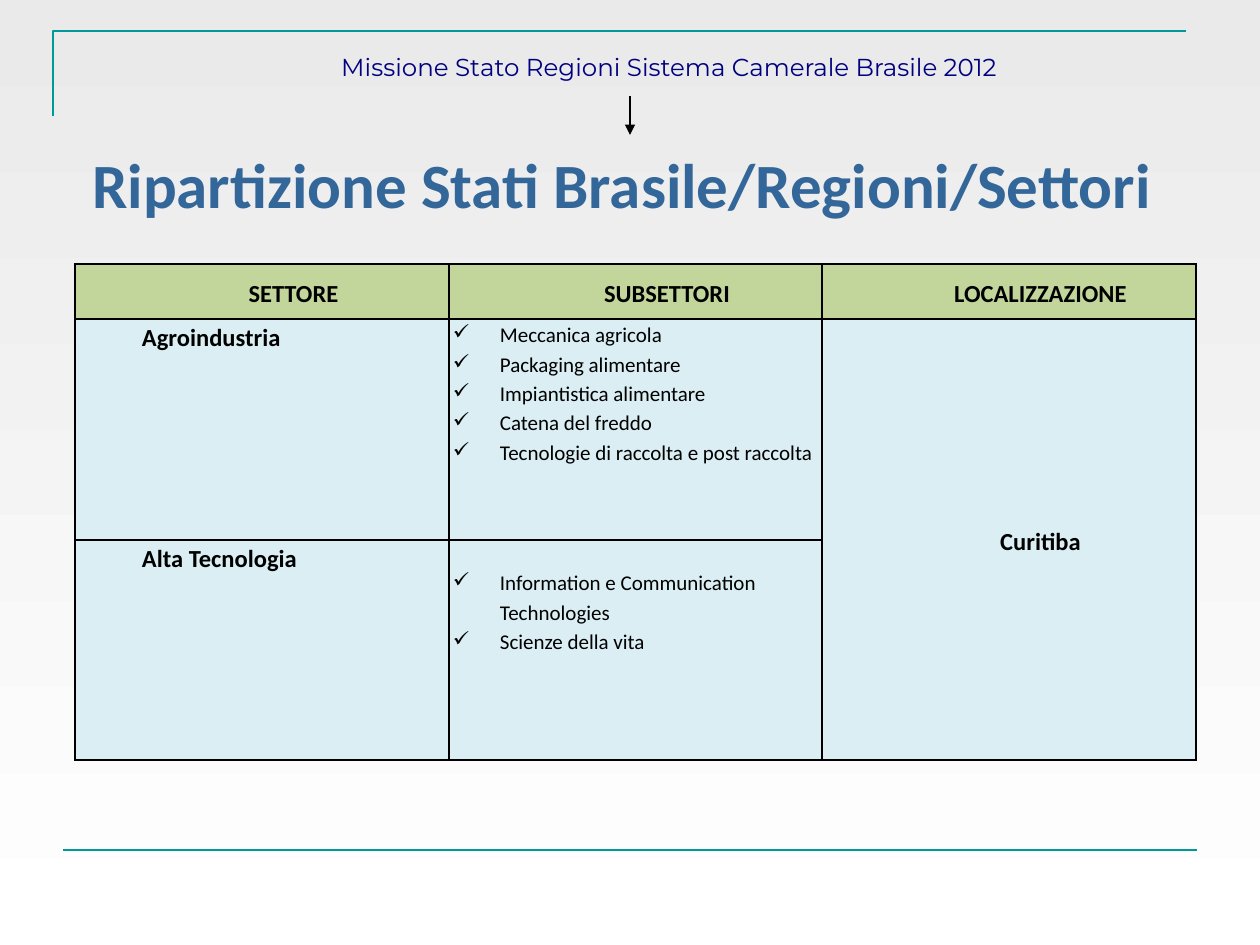
import dataclasses

import pptx
import pptx.dml.color
import pptx.enum.shapes
import pptx.enum.text
import pptx.oxml
import pptx.oxml.ns
import pptx.util

SCALE = 914400 / 126
COLORS = {
    "teal": "009999", "navy": "000080", "title": "336699", "black": "000000",
    "header": "C2D69B", "body": "DAEEF3", "top": "EAEAEA", "bottom": "FFFFFF",
}
ALIGN = pptx.enum.text.PP_ALIGN
ANCHOR = pptx.enum.text.MSO_ANCHOR
NAMESPACE = pptx.oxml.ns.nsdecls("a")


@dataclasses.dataclass
class Line:
    start: tuple[int, int]
    end: tuple[int, int]
    color: str
    width: float
    arrow: bool = False


@dataclasses.dataclass
class Cell:
    row: int
    column: int
    lines: list[str]
    fill: str = "body"
    centered: bool = False
    bullets: bool = False
    top: int = 0


LINES = [
    Line((63, 850), (1197, 850), "teal", 1.5),
    Line((630, 96), (630, 135), "black", 0.75, arrow=True),
]
HEADERS = ["SETTORE", "SUBSETTORI", "LOCALIZZAZIONE"]
CELLS = [
    *(Cell(0, column, [text], "header", centered=True) for column, text in enumerate(HEADERS)),
    Cell(1, 0, ["Agroindustria"]),
    Cell(1, 1, ["Meccanica agricola", "Packaging alimentare", "Impiantistica alimentare",
                "Catena del freddo", "Tecnologie di raccolta e post raccolta"], bullets=True),
    Cell(1, 2, ["Curitiba"], centered=True),
    Cell(2, 0, ["Alta Tecnologia"]),
    Cell(2, 1, ["Information e Communication Technologies", "Scienze della vita"],
         bullets=True, top=27),
]


def px(value: int) -> int:
    """Turn pixels into EMU."""
    return round(value * SCALE)


def rgb(name: str) -> pptx.dml.color.RGBColor:
    """Look up a named colour."""
    return pptx.dml.color.RGBColor.from_string(COLORS[name])


def write_text(frame, lines: list[str], *, size: int, color: str = "black", font: str = "Calibri",
               bold: bool = False, align=ALIGN.LEFT, spacing: float = 1.0,
               margin: int = 0, indent: int = 0, bullet: str = "") -> None:
    """Fill a text frame with one formatted paragraph per line."""
    for index, text in enumerate(lines):
        paragraph = frame.add_paragraph() if index else frame.paragraphs[0]
        paragraph.alignment = align
        paragraph.line_spacing = spacing
        properties = paragraph._p.get_or_add_pPr()
        properties.set("marL", str(px(margin)))
        properties.set("indent", str(px(indent)))
        if bullet:
            properties.append(pptx.oxml.parse_xml(f'<a:buChar {NAMESPACE} char="{bullet}"/>'))
        run = paragraph.add_run()
        run.text = text
        run.font.size = pptx.util.Pt(size)
        run.font.name = font
        run.font.bold = bold
        run.font.color.rgb = rgb(color)


def add_label(slide, box: tuple[int, int, int, int], text: str, **style) -> None:
    """Add a centred one-line text box."""
    shape = slide.shapes.add_textbox(*map(px, box))
    shape.text_frame.word_wrap = True
    write_text(shape.text_frame, [text], align=ALIGN.CENTER, **style)


def add_line(slide, line: Line) -> None:
    """Draw a straight line with an optional arrowhead."""
    connector = slide.shapes.add_connector(
        pptx.enum.shapes.MSO_CONNECTOR.STRAIGHT, *map(px, line.start + line.end))
    connector.line.color.rgb = rgb(line.color)
    connector.line.width = pptx.util.Pt(line.width)
    if line.arrow:
        connector.line._get_or_add_ln().append(
            pptx.oxml.parse_xml(f'<a:tailEnd {NAMESPACE} type="triangle"/>'))
    connector._element.spPr.append(pptx.oxml.parse_xml(f"<a:effectLst {NAMESPACE}/>"))


def add_corner(slide) -> None:
    """Draw the open corner at the top left."""
    builder = slide.shapes.build_freeform(53, 116, scale=SCALE)
    builder.add_line_segments([(53, 31), (1186, 31)], close=False)
    shape = builder.convert_to_shape()
    shape.shadow.inherit = False
    shape.fill.background()
    shape.line.color.rgb = rgb("teal")
    shape.line.width = pptx.util.Pt(1.5)


def add_borders(cell) -> None:
    """Give a table cell a thin black border on every side."""
    properties = cell._tc.get_or_add_tcPr()
    for index, side in enumerate("LRTB"):
        properties.insert(index, pptx.oxml.parse_xml(
            f'<a:ln{side} {NAMESPACE} w="12700"><a:solidFill>'
            f'<a:srgbClr val="{COLORS["black"]}"/></a:solidFill></a:ln{side}>'))


def fill_cell(table, entry: Cell) -> None:
    """Write and format one table cell."""
    cell = table.cell(entry.row, entry.column)
    cell.margin_left = cell.margin_right = px(4)
    cell.margin_top, cell.margin_bottom = px(entry.top), 0
    cell.vertical_anchor = ANCHOR.MIDDLE if entry.centered else ANCHOR.TOP
    cell.fill.solid()
    cell.fill.fore_color.rgb = rgb(entry.fill)
    if entry.bullets:
        style = {"size": 12, "margin": 47, "indent": -47, "bullet": "✓"}
    else:
        style = {"size": 14, "margin": 63, "bold": True}
    write_text(cell.text_frame, entry.lines, spacing=1.15,
               align=ALIGN.CENTER if entry.centered else ALIGN.LEFT, **style)


def add_sector_table(slide) -> None:
    """Build the table of sectors, subsectors and location."""
    widths, heights = [374, 373, 374], [55, 221, 220]
    table = slide.shapes.add_table(
        3, 3, px(75), px(264), px(sum(widths)), px(sum(heights))).table
    table.first_row = table.horz_banding = False
    for column, width in zip(table.columns, widths):
        column.width = px(width)
    for row, height in zip(table.rows, heights):
        row.height = px(height)
    table.cell(1, 2).merge(table.cell(2, 2))
    for entry in CELLS:
        fill_cell(table, entry)
    for cell in table.iter_cells():
        add_borders(cell)


def set_background(slide) -> None:
    """Shade the background from grey at the top to white."""
    fill = slide.background.fill
    fill.gradient()
    fill.gradient_angle = 270
    for stop, name, position in zip(fill.gradient_stops, ("top", "bottom"), (0, 1)):
        stop.color.rgb = rgb(name)
        stop.position = position


def main() -> None:
    """Build and save the slide."""
    presentation = pptx.Presentation()
    presentation.slide_width, presentation.slide_height = px(1260), px(945)
    slide = presentation.slides.add_slide(presentation.slide_layouts[6])
    set_background(slide)
    add_corner(slide)
    add_label(slide, (223, 46, 893, 42), "Missione Stato Regioni Sistema Camerale Brasile 2012",
              size=14, color="navy", font="Montserrat")
    add_label(slide, (42, 139, 1160, 90), "Ripartizione Stati Brasile/Regioni/Settori",
              size=36, color="title", bold=True)
    for line in LINES:
        add_line(slide, line)
    add_sector_table(slide)
    presentation.save("out.pptx")


if __name__ == "__main__":
    main()
